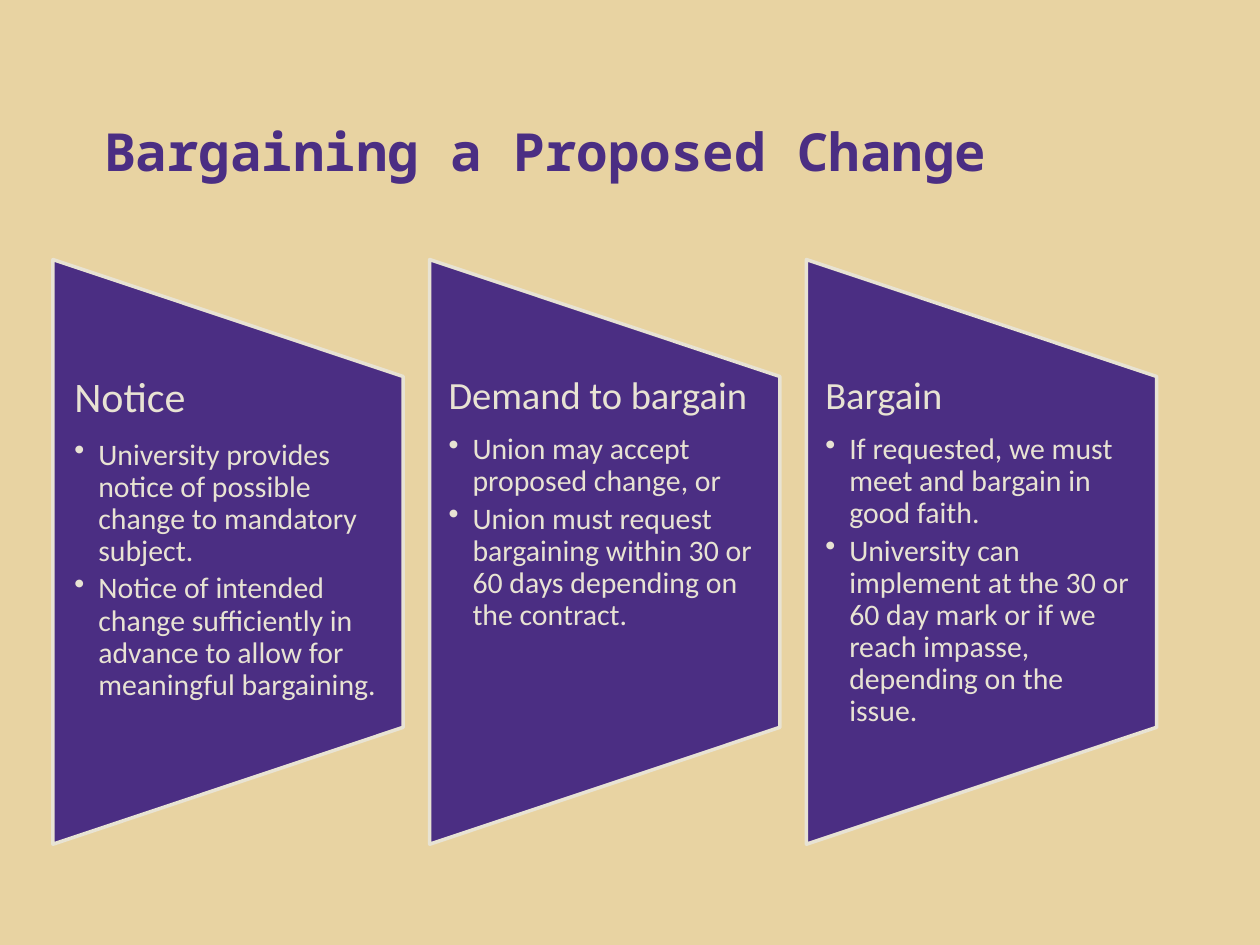
from dataclasses import dataclass

from lxml.etree import SubElement
from pptx import Presentation
from pptx.dml.color import RGBColor
from pptx.enum.shapes import MSO_SHAPE
from pptx.enum.text import MSO_ANCHOR
from pptx.oxml.ns import qn
from pptx.util import Inches, Pt


@dataclass(frozen=True)
class Theme:
    """Colours, fonts and type sizes of the slide."""
    sand: RGBColor = RGBColor(0xE8, 0xD3, 0xA2)
    purple: RGBColor = RGBColor(0x4B, 0x2E, 0x83)
    cream: RGBColor = RGBColor(0xE8, 0xE3, 0xD3)
    mono: str = "Noto Sans Mono"
    sans: str = "Calibri"
    title: int = 30
    body: int = 17


THEME = Theme()

STEPS = [
    ("Notice", 24, 0.17, [
        "University provides notice of possible change to mandatory subject.",
        "Notice of intended change sufficiently in advance to allow for meaningful bargaining.",
    ]),
    ("Demand to bargain", 22, 0.15, [
        "Union may accept proposed change, or",
        "Union must request bargaining within 30 or 60 days depending on the contract.",
    ]),
    ("Bargain", 22, 0.15, [
        "If requested, we must meet and bargain in good faith.",
        "University can implement at the 30 or 60 day mark or if we reach impasse, "
        "depending on the issue.",
    ]),
]


def style(para, face, size, color, bold=False):
    """Set the font of a paragraph."""
    font = para.font
    font.name, font.size, font.bold = face, Pt(size), bold
    font.color.rgb = color


def add_text(slide, left, top, width, height):
    """Add a wrapping text box and return its frame."""
    frame = slide.shapes.add_textbox(left, top, width, height).text_frame
    frame.word_wrap = True
    return frame


def add_bullet(para):
    """Give a paragraph a hanging round bullet."""
    props = para._p.get_or_add_pPr()
    indent = Inches(0.19)
    props.set("marL", str(indent))
    props.set("indent", str(-indent))
    SubElement(props, qn("a:buChar"), char="•")


def add_title(slide, left, top, width, height):
    """Place the slide title at the bottom of its box."""
    frame = add_text(slide, left, top, width, height)
    frame.vertical_anchor = MSO_ANCHOR.BOTTOM
    para = frame.paragraphs[0]
    para.text = "Bargaining a Proposed Change"
    style(para, THEME.mono, THEME.title, THEME.purple, True)


def add_panel(slide, left, top, width, height, step):
    """Place one tapered panel with its heading and bullets."""
    head, size, inset, points = step
    shift = (height - width) // 2
    panel = slide.shapes.add_shape(
        MSO_SHAPE.FLOWCHART_MANUAL_OPERATION,
        left - shift, top + shift, height, width)
    panel.rotation = 270
    panel.shadow.inherit = False
    panel.fill.solid()
    panel.fill.fore_color.rgb = THEME.purple
    panel.line.color.rgb = THEME.cream
    panel.line.width = Pt(2)

    frame = add_text(slide, left, top + int(height * 0.2), width, int(height * 0.6))
    frame.margin_left = frame.margin_right = Inches(inset)
    frame.margin_top = frame.margin_bottom = 0
    para = frame.paragraphs[0]
    para.text = head
    para.line_spacing = 0.9
    para.space_after = Pt(round(size * 0.42))
    style(para, THEME.sans, size, THEME.cream)
    for point in points:
        para = frame.add_paragraph()
        para.text = point
        para.level = 1
        para.line_spacing = 0.9
        para.space_before = Pt(0)
        para.space_after = Pt(3)
        add_bullet(para)
        style(para, THEME.sans, THEME.body, THEME.cream)


def main():
    """Build and save the slide."""
    deck = Presentation()
    deck.slide_width, deck.slide_height = Inches(10), Inches(7.5)
    slide = deck.slides.add_slide(deck.slide_layouts[6])
    fill = slide.background.fill
    fill.solid()
    fill.fore_color.rgb = THEME.sand
    add_title(slide, Inches(0.73), Inches(0.4), Inches(8.95), Inches(1.09))
    for i, step in enumerate(STEPS):
        add_panel(slide, Inches(0.42 + 2.99 * i), Inches(2.06),
                  Inches(2.78), Inches(4.64), step)
    deck.save("out.pptx")


if __name__ == "__main__":
    main()
